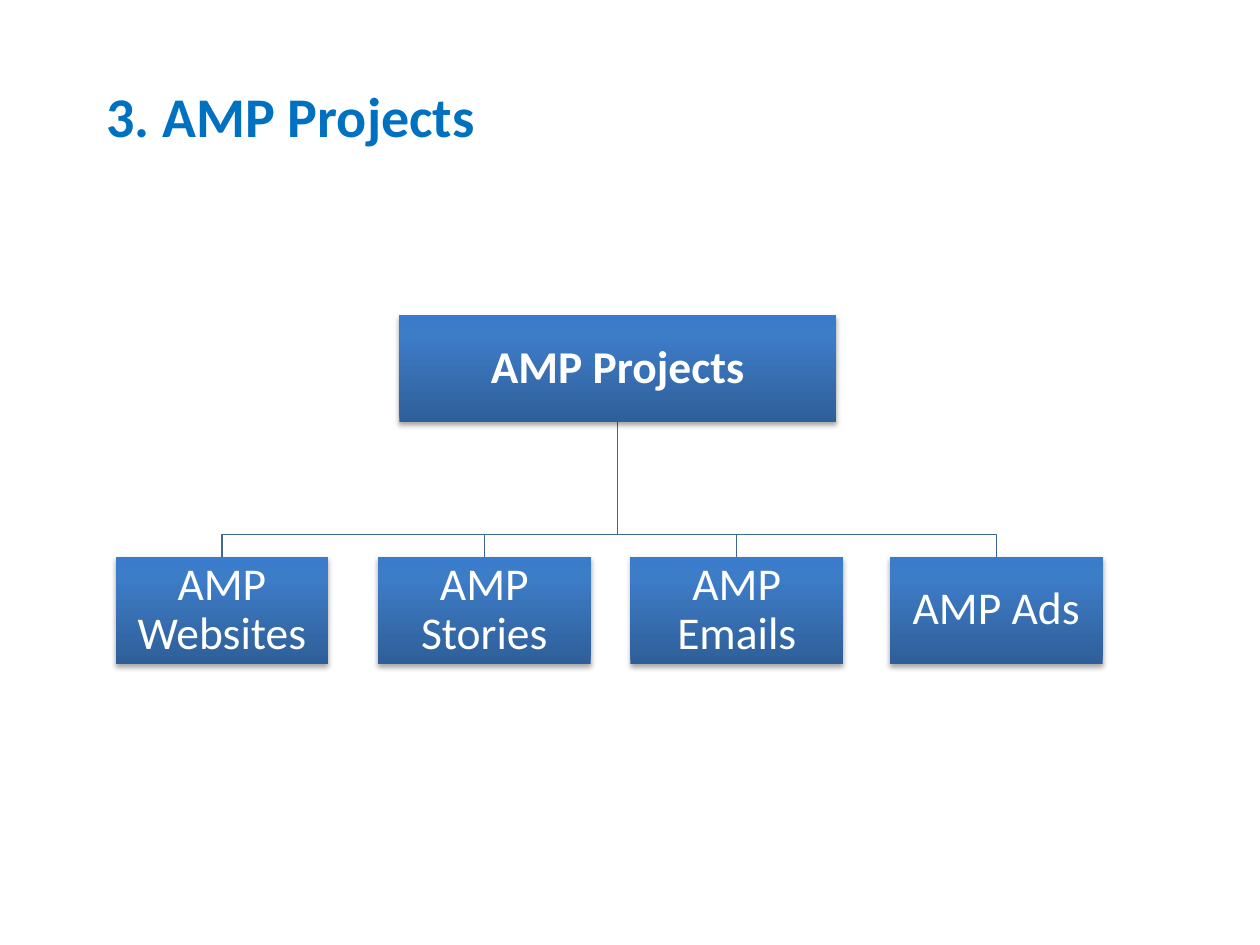
from pptx import Presentation
from pptx.dml.color import RGBColor
from pptx.enum.shapes import MSO_SHAPE
from pptx.enum.text import MSO_ANCHOR, MSO_AUTO_SIZE, PP_ALIGN
from pptx.oxml import parse_xml
from pptx.oxml.ns import nsdecls, qn
from pptx.util import Cm, Pt

FONT = "Calibri"
BOX_STOPS = [(0, "2F5F99"), (80, "3D7CC7"), (100, "3A7CCB")]
BOX_H = 2.16
ROOT_LEFT, ROOT_TOP, ROOT_W = 8.05, 6.35, 8.81
CHILD_TOP, CHILD_W = 11.22, 4.29
BRANCH_Y = 10.77
CHILDREN = [("AMP Websites", 2.33), ("AMP Stories", 7.62),
            ("AMP Emails", 12.71), ("AMP Ads", 17.94)]


def rgb(hex_color):
    return RGBColor.from_string(hex_color)


def add_run(p, text, size, color, bold=False):
    r = p.add_run()
    r.text = text
    r.font.name = FONT
    r.font.size = Pt(size)
    r.font.bold = bold
    r.font.color.rgb = rgb(color)


def set_gradient(sp, stops):
    """Fill with a gradient that runs from bottom to top."""
    sp.fill.gradient()
    old = sp._element.spPr.find(qn("a:gradFill"))
    gs = "".join(f'<a:gs pos="{pos * 1000}"><a:srgbClr val="{color}"/></a:gs>'
                 for pos, color in stops)
    old.getparent().replace(old, parse_xml(
        f'<a:gradFill {nsdecls("a")} rotWithShape="1"><a:gsLst>{gs}</a:gsLst>'
        '<a:lin ang="16200000" scaled="0"/></a:gradFill>'))


def set_shadow(sp):
    """Cast a soft black shadow straight down."""
    sp.shadow.inherit = False
    sp._element.spPr.find(qn("a:effectLst")).append(parse_xml(
        f'<a:outerShdw {nsdecls("a")} blurRad="{Pt(3.1)}" dist="{Pt(1.8)}" '
        'dir="5400000" rotWithShape="0"><a:srgbClr val="000000">'
        '<a:alpha val="35000"/></a:srgbClr></a:outerShdw>'))


def add_box(s, text, left, top, width, bold=False):
    sp = s.shapes.add_shape(MSO_SHAPE.RECTANGLE, Cm(left), Cm(top),
                            Cm(width), Cm(BOX_H))
    sp.line.fill.background()
    set_gradient(sp, BOX_STOPS)
    set_shadow(sp)
    tf = sp.text_frame
    tf.word_wrap = True
    tf.vertical_anchor = MSO_ANCHOR.MIDDLE
    tf.margin_left = tf.margin_right = Cm(0.05)
    tf.margin_top = tf.margin_bottom = Cm(0.05)
    p = tf.paragraphs[0]
    p.alignment = PP_ALIGN.CENTER
    p.line_spacing = 0.9
    add_run(p, text, 26, "FFFFFF", bold)


def add_branch(s, points):
    """Draw an open elbow line through the points."""
    start, *rest = [(Cm(x), Cm(y)) for x, y in points]
    builder = s.shapes.build_freeform(*start)
    builder.add_line_segments(rest, close=False)
    sp = builder.convert_to_shape()
    sp.fill.background()
    sp.line.color.rgb = rgb("3F6797")
    sp.line.width = Pt(0.75)
    sp.shadow.inherit = False


def add_title(s, text):
    tf = s.shapes.add_textbox(Cm(1.9), Cm(1.52), Cm(8), Cm(1.62)).text_frame
    tf.word_wrap = False
    tf.auto_size = MSO_AUTO_SIZE.SHAPE_TO_FIT_TEXT
    add_run(tf.paragraphs[0], text, 32, "0070C0", bold=True)


def main():
    prs = Presentation()
    prs.slide_width, prs.slide_height = Cm(25.4), Cm(19.05)
    s = prs.slides.add_slide(prs.slide_layouts[6])

    root_x = ROOT_LEFT + ROOT_W / 2
    for _, left in reversed(CHILDREN):
        child_x = left + CHILD_W / 2
        add_branch(s, [(root_x, ROOT_TOP + BOX_H), (root_x, BRANCH_Y),
                       (child_x, BRANCH_Y), (child_x, CHILD_TOP)])
    add_box(s, "AMP Projects", ROOT_LEFT, ROOT_TOP, ROOT_W, bold=True)
    for text, left in CHILDREN:
        add_box(s, text, left, CHILD_TOP, CHILD_W)
    add_title(s, "3. AMP Projects")

    prs.save("out.pptx")


if __name__ == "__main__":
    main()
